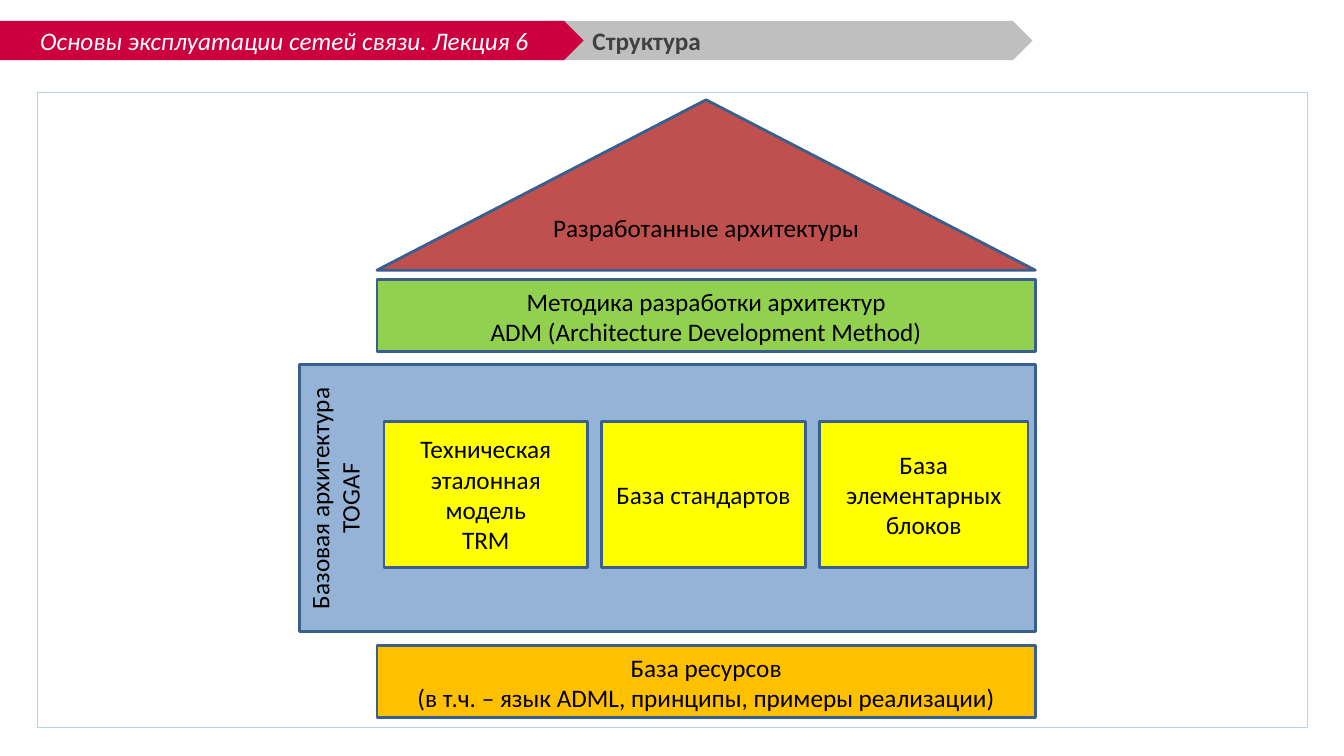
from pptx import Presentation
from pptx.dml.color import RGBColor
from pptx.enum.shapes import MSO_SHAPE
from pptx.enum.text import MSO_ANCHOR, MSO_AUTO_SIZE, PP_ALIGN
from pptx.oxml.ns import qn
from pptx.util import Pt

RECT, ARROW, ROOF = MSO_SHAPE.RECTANGLE, MSO_SHAPE.PENTAGON, MSO_SHAPE.ISOSCELES_TRIANGLE
TOP, MIDDLE, BOTTOM = MSO_ANCHOR.TOP, MSO_ANCHOR.MIDDLE, MSO_ANCHOR.BOTTOM
LEFT, CENTER = PP_ALIGN.LEFT, PP_ALIGN.CENTER
HEX = {
    "white": "FFFFFF", "black": "000000", "dark": "404040", "gray": "BFBFBF",
    "crimson": "CC003F", "pale": "B8D0ED", "edge": "3A5F8C", "red": "C0504D",
    "green": "92D050", "blue": "95B3D7", "orange": "FFC000", "yellow": "FFFF00",
}


def write(shape, lines, color="black", align=CENTER, anchor=MIDDLE, bold=False, italic=False):
    frame = shape.text_frame
    frame.word_wrap = True
    frame.auto_size = MSO_AUTO_SIZE.NONE
    frame.vertical_anchor = anchor
    for i, line in enumerate(lines):
        para = frame.add_paragraph() if i else frame.paragraphs[0]
        para.alignment = align
        run = para.add_run()
        run.text = line
        font = run.font
        font.name, font.size, font.bold, font.italic = "Calibri", Pt(18), bold, italic
        font.color.rgb = RGBColor.from_string(HEX[color])


def draw(kind, box, fill=None, line=None, width=2):
    shape = slide.shapes.add_shape(kind, *map(Pt, box))
    shape.shadow.inherit = False
    if fill:
        shape.fill.solid()
        shape.fill.fore_color.rgb = RGBColor.from_string(HEX[fill])
    else:
        shape.fill.background()
    if line:
        shape.line.color.rgb = RGBColor.from_string(HEX[line])
        shape.line.width = Pt(width)
    else:
        shape.line.fill.background()
    return shape


deck = Presentation()
deck.slide_width, deck.slide_height = Pt(960), Pt(540)
slide = deck.slides.add_slide(deck.slide_layouts[5])

# Header band and frame
draw(ARROW, (389.5, 15, 348, 28), "gray")
draw(RECT, (26.6, 66.2, 907.2, 453.6), line="pale", width=0.25)
course = draw(ARROW, (-3.6, 15, 420.5, 28), "crimson")
write(course, ["Основы эксплуатации сетей связи. Лекция 6"], "white", italic=True)

title = slide.shapes.title
title.left, title.top, title.width, title.height = Pt(416), Pt(15), Pt(298), Pt(28)
write(title, ["Структура"], "dark", LEFT, bold=True)
title.element.getparent().append(title.element)  # bring above the band

# House: roof, beam, body, base
roof = draw(ROOF, (269.3, 71.3, 470.2, 121.7), "red", "edge")
write(roof, ["Разработанные архитектуры"])

beam = draw(RECT, (269.3, 199.4, 470.2, 51.8), "green", "edge")
write(beam, ["Методика разработки архитектур", "ADM (Architecture Development Method)"], anchor=BOTTOM)

body = draw(RECT, (213.8, 260.6, 525.7, 190.8), "blue", "edge")
write(body, ["Базовая архитектура", "TOGAF"], anchor=TOP)
body.element.find(".//" + qn("a:bodyPr")).set("vert", "vert270")

base = draw(RECT, (269.3, 460.8, 470.2, 51.8), "orange", "edge")
write(base, ["База ресурсов", "(в т.ч. – язык ADML, принципы, примеры реализации)"], anchor=BOTTOM)

# Parts inside the body
parts = [
    (145.4, ["Техническая эталонная модель", "TRM"]),
    (145.4, ["База стандартов"]),
    (149, ["База элементарных блоков"]),
]
for i, (width, lines) in enumerate(parts):
    part = draw(RECT, (274.3 + 155.5 * i, 300.8, width, 104.4), "yellow", "edge")
    write(part, lines)

deck.save("out.pptx")
